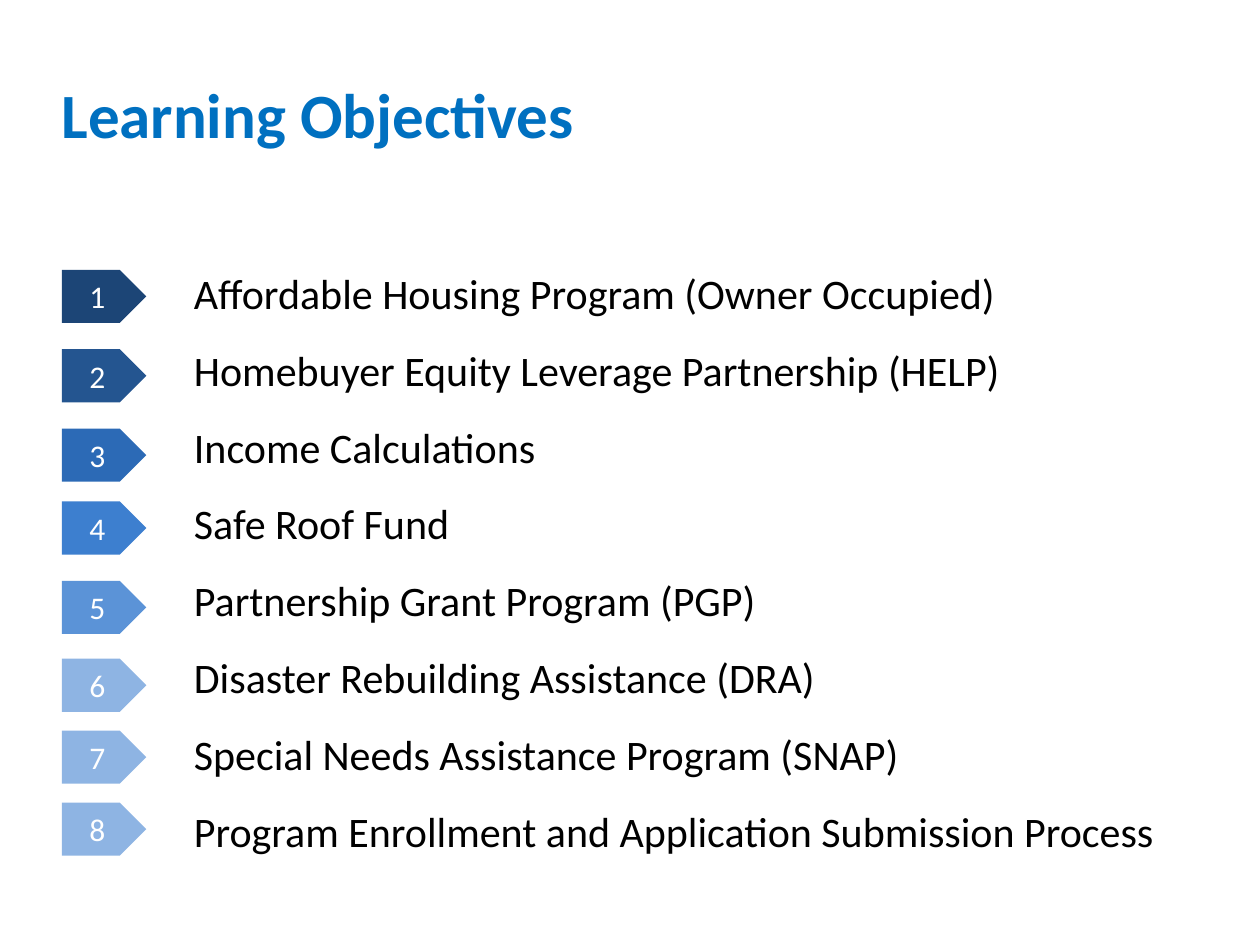
from pptx import Presentation
from pptx.dml.color import RGBColor
from pptx.enum.shapes import MSO_SHAPE
from pptx.enum.text import MSO_ANCHOR, PP_ALIGN
from pptx.util import Cm, Pt

COLORS = {
    "title": "0070C0",
    "body": "000000",
    "number": "FFFFFF",
    "navy": "1C4576",
    "dark": "245590",
    "medium": "2C6AB6",
    "bright": "3D7FCF",
    "soft": "5B93D7",
    "pale": "8EB4E3",
}
FONT = "Calibri"
TITLE = "Learning Objectives"
OBJECTIVES = [
    ("Affordable Housing Program (Owner Occupied)", "navy", 5.44),
    ("Homebuyer Equity Leverage Partnership (HELP)", "dark", 7.04),
    ("Income Calculations", "medium", 8.64),
    ("Safe Roof Fund", "bright", 10.11),
    ("Partnership Grant Program (PGP)", "soft", 11.71),
    ("Disaster Rebuilding Assistance (DRA)", "pale", 13.28),
    ("Special Needs Assistance Program (SNAP)", "pale", 14.73),
    ("Program Enrollment and Application Submission Process", "pale", 16.18),
]
MARKER_LEFT, MARKER_WIDTH, MARKER_HEIGHT = 1.25, 1.7, 1.07


def color(name):
    return RGBColor.from_string(COLORS[name])


def add_run(paragraph, text, size, color_name, bold=False):
    run = paragraph.add_run()
    run.text = text
    run.font.name = FONT
    run.font.size = Pt(size)
    run.font.bold = bold
    run.font.color.rgb = color(color_name)


def add_text_frame(slide, left, top, width, height):
    frame = slide.shapes.add_textbox(Cm(left), Cm(top), Cm(width), Cm(height)).text_frame
    frame.word_wrap = True
    return frame


def add_marker(slide, number, fill, top):
    marker = slide.shapes.add_shape(
        MSO_SHAPE.PENTAGON, Cm(MARKER_LEFT), Cm(top), Cm(MARKER_WIDTH), Cm(MARKER_HEIGHT)
    )
    marker.shadow.inherit = False
    marker.fill.solid()
    marker.fill.fore_color.rgb = color(fill)
    marker.line.fill.background()
    marker.text_frame.vertical_anchor = MSO_ANCHOR.MIDDLE
    label = marker.text_frame.paragraphs[0]
    label.alignment = PP_ALIGN.CENTER
    add_run(label, str(number), 18, "number")


def main():
    deck = Presentation()
    deck.slide_width, deck.slide_height = Cm(25.4), Cm(19.05)
    slide = deck.slides.add_slide(deck.slide_layouts[6])

    objectives = add_text_frame(slide, 3.66, 5.38, 20.22, 11.86)
    for number, (objective, fill, top) in enumerate(OBJECTIVES, 1):
        line = objectives.paragraphs[0] if number == 1 else objectives.add_paragraph()
        line.line_spacing = 0.9
        line.space_after = Pt(18)
        add_run(line, objective, 24, "body")
        add_marker(slide, number, fill, top)

    title = add_text_frame(slide, 0.99, 1.65, 20.75, 1.27)
    title.vertical_anchor = MSO_ANCHOR.MIDDLE
    add_run(title.paragraphs[0], TITLE, 36, "title", bold=True)

    deck.save("out.pptx")


if __name__ == "__main__":
    main()
